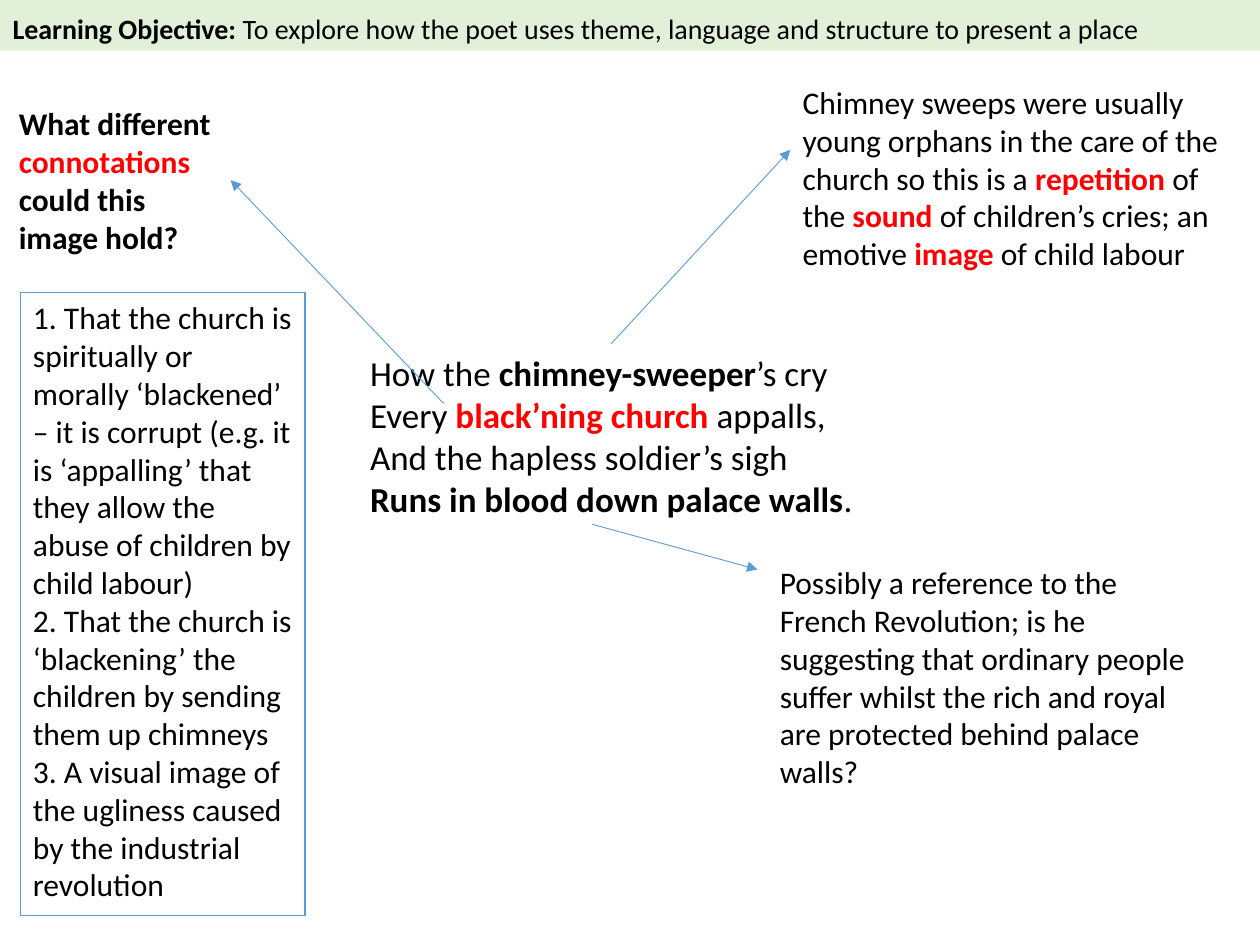
from lxml.etree import SubElement
from pptx import Presentation
from pptx.dml.color import RGBColor
from pptx.enum.shapes import MSO_CONNECTOR
from pptx.enum.text import MSO_ANCHOR, MSO_AUTO_SIZE, PP_ALIGN
from pptx.oxml.ns import qn
from pptx.util import Cm, Pt

COLORS = {"text": "000000", "key": "FF0000", "bar": "E2F0D9", "line": "5B9BD5"}


def color(name):
    return RGBColor.from_string(COLORS[name])


def write(shape, place, size, rows):
    """Place a shape and fill it; a run is (text, bold, colour name)."""
    shape.left, shape.top, shape.width, shape.height = map(Cm, place)
    frame = shape.text_frame
    frame.word_wrap = True
    frame.auto_size = MSO_AUTO_SIZE.NONE
    frame.vertical_anchor = MSO_ANCHOR.TOP
    for i, row in enumerate(rows):
        para = frame.add_paragraph() if i else frame.paragraphs[0]
        para.alignment = PP_ALIGN.LEFT
        para.space_before = Pt(0)
        for text, bold, tone in row:
            run = para.add_run()
            run.text = text
            font = run.font
            font.name, font.size, font.bold = "Calibri", Pt(size), bold
            font.color.rgb = color(tone)


deck = Presentation()
deck.slide_width, deck.slide_height = Cm(25.4), Cm(19.05)
slide = deck.slides.add_slide(deck.slide_layouts[1])
shapes = slide.shapes

# Learning objective bar
title = shapes.title
write(title, (0, 0, 25.4, 1.02), 16, [[
    ("Learning Objective: ", True, "text"),
    ("To explore how the poet uses theme, language and structure to present a place", False, "text"),
]])
title.text_frame.margin_top = Cm(0.23)
title.fill.solid()
title.fill.fore_color.rgb = color("bar")

# Boxed list of answers, with typed numbers
body = slide.placeholders[1]
items = [
    "1. That the church is spiritually or morally ‘blackened’ – it is corrupt (e.g. it is ‘appalling’ "
    "that they allow the abuse of children by child labour)",
    "2. That the church is ‘blackening’ the children by sending them up chimneys",
    "3. A visual image of the ugliness caused by the industrial revolution",
]
write(body, (0.41, 5.89, 5.74, 12.57), 18, [[(item, False, "text")] for item in items])
body.line.color.rgb = color("line")
body.line.width = Pt(0.75)
for para in body.text_frame.paragraphs:
    props = para._p.get_or_add_pPr()
    props.set("marL", "0")
    props.set("indent", "0")
    SubElement(props, qn("a:buNone"))

# Poem in the middle and the notes around it
poem = [
    [("How the ", False, "text"), ("chimney-sweeper", True, "text"), ("’s cry", False, "text")],
    [("Every ", False, "text"), ("black’ning church ", True, "key"), ("appalls,", False, "text")],
    [("And the hapless soldier’s sigh", False, "text")],
    [("Runs in blood down palace walls", True, "text"), (".", False, "text")],
]
sweeps = [[
    ("Chimney sweeps were usually young orphans in the care of the church so this is a ", False, "text"),
    ("repetition ", True, "key"),
    ("of the ", False, "text"),
    ("sound", True, "key"),
    (" of children’s cries; an emotive ", False, "text"),
    ("image", True, "key"),
    (" of child labour", False, "text"),
]]
question = [[
    ("What different ", True, "text"),
    ("connotations", True, "key"),
    (" could this image hold?", True, "text"),
]]
revolt = [[(
    "Possibly a reference to the French Revolution; is he suggesting that ordinary people suffer "
    "whilst the rich and royal are protected behind palace walls?", False, "text",
)]]
for place, size, rows in [
    ((7.21, 6.96, 14.38, 3.62), 20, poem),
    ((15.93, 1.55, 9.17, 4.11), 18, sweeps),
    ((0.13, 1.98, 4.52, 3.33), 18, question),
    ((15.47, 11.23, 8.69, 4.88), 18, revolt),
]:
    write(shapes.add_textbox(0, 0, 0, 0), place, size, rows)

# Arrows from the poem to the notes
for ends in [
    (12.32, 6.93, 15.93, 3.02),
    (8.94, 8.13, 4.65, 3.63),
    (11.94, 10.57, 15.27, 11.48),
]:
    arrow = shapes.add_connector(MSO_CONNECTOR.STRAIGHT, *map(Cm, ends))
    arrow.line.color.rgb = color("line")
    arrow.line.width = Pt(0.5)
    SubElement(arrow.line._get_or_add_ln(), qn("a:tailEnd"), type="triangle")
    SubElement(arrow._element.spPr, qn("a:effectLst"))

deck.save("out.pptx")
